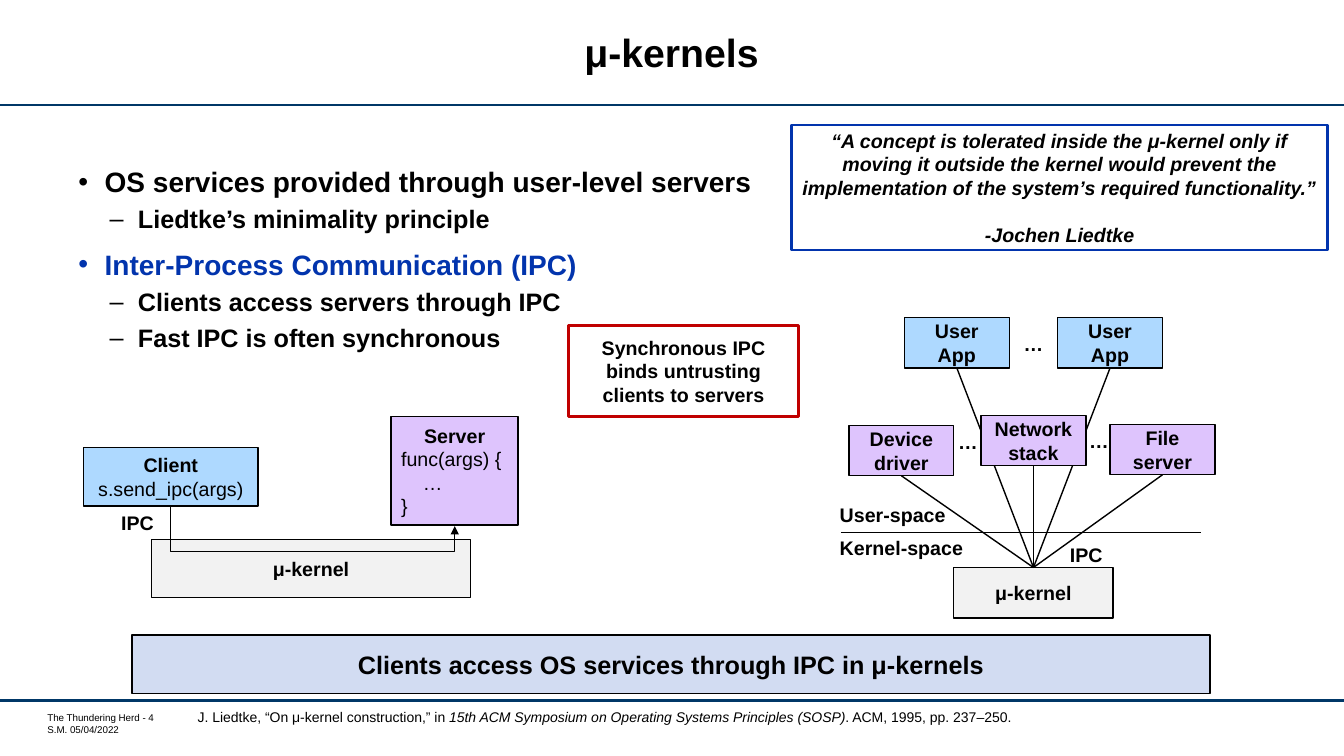
from dataclasses import dataclass

from lxml import etree
from pptx import Presentation
from pptx import util as u
from pptx.dml.color import RGBColor
from pptx.enum import shapes, text
from pptx.oxml import ns

BLACK = RGBColor(0x00, 0x00, 0x00)
WHITE = RGBColor(0xFF, 0xFF, 0xFF)
NAVY = RGBColor(0x00, 0x37, 0x67)
BLUE = RGBColor(0x02, 0x34, 0xAD)
RED = RGBColor(0xC0, 0x00, 0x00)
APP_BLUE = RGBColor(0xAE, 0xD9, 0xFF)
SERVER_PURPLE = RGBColor(0xDE, 0xC4, 0xFD)
KERNEL_GREY = RGBColor(0xF2, 0xF2, 0xF2)
SUMMARY_BLUE = RGBColor(0xD2, 0xDC, 0xF2)

LEFT, CENTER = text.PP_ALIGN.LEFT, text.PP_ALIGN.CENTER
TOP, MIDDLE = text.MSO_ANCHOR.TOP, text.MSO_ANCHOR.MIDDLE


@dataclass(frozen=True)
class Line:
    """One paragraph of text."""
    text: str
    size: float = 14
    bold: bool = True
    italic: bool = False
    align: text.PP_ALIGN = CENTER
    color: RGBColor = BLACK
    space_before: float = 0


@dataclass(frozen=True)
class Box:
    left: float
    top: float
    width: float
    height: float
    lines: tuple[Line, ...]
    fill: RGBColor
    border: RGBColor = BLACK
    border_width: float = 1


@dataclass(frozen=True)
class Label:
    left: float
    top: float
    width: float
    height: float
    lines: tuple[Line, ...]
    wrap: bool = False
    anchor: text.MSO_ANCHOR = TOP
    inset: bool = True


@dataclass(frozen=True)
class Bullet:
    line: Line
    symbol: str
    margin: float
    hanging: float


def style_paragraph(paragraph, line: Line) -> None:
    paragraph.alignment = line.align
    if line.space_before:
        paragraph.space_before = u.Pt(line.space_before)
    font = paragraph.font
    font.name, font.size = "Arial", u.Pt(line.size)
    font.bold, font.italic = line.bold, line.italic
    font.color.rgb = line.color


def write_lines(frame, lines: tuple[Line, ...]) -> None:
    for index, line in enumerate(lines):
        paragraph = frame.add_paragraph() if index else frame.paragraphs[0]
        paragraph.add_run().text = line.text
        style_paragraph(paragraph, line)


def draw_box(slide, box: Box) -> None:
    shape = slide.shapes.add_shape(
        shapes.MSO_SHAPE.RECTANGLE, u.Inches(box.left), u.Inches(box.top),
        u.Inches(box.width), u.Inches(box.height))
    shape.shadow.inherit = False
    shape.fill.solid()
    shape.fill.fore_color.rgb = box.fill
    shape.line.color.rgb = box.border
    shape.line.width = u.Pt(box.border_width)
    shape.text_frame.word_wrap = True
    shape.text_frame.vertical_anchor = MIDDLE
    write_lines(shape.text_frame, box.lines)


def draw_label(slide, label: Label):
    """Draw a text box and return its text frame."""
    frame = slide.shapes.add_textbox(
        u.Inches(label.left), u.Inches(label.top),
        u.Inches(label.width), u.Inches(label.height)).text_frame
    frame.word_wrap = label.wrap
    frame.vertical_anchor = label.anchor
    if not label.inset:
        frame.margin_left = frame.margin_top = frame.margin_right = frame.margin_bottom = 0
    write_lines(frame, label.lines)
    return frame


def draw_connector(slide, start: tuple[float, float], end: tuple[float, float],
                   color: RGBColor = BLACK, width: float = 1,
                   kind: shapes.MSO_CONNECTOR = shapes.MSO_CONNECTOR.STRAIGHT):
    connector = slide.shapes.add_connector(
        kind, *(u.Inches(value) for value in (*start, *end)))
    connector.line.color.rgb = color
    connector.line.width = u.Pt(width)
    etree.SubElement(connector.element.spPr, ns.qn("a:effectLst"))
    return connector


def draw_ipc_arrow(slide) -> None:
    """Draw the arrow from the client down through the kernel and up to the server."""
    arrow = draw_connector(slide, (3.2, 3.71), (3, 6.53), kind=shapes.MSO_CONNECTOR.ELBOW)
    properties = arrow.element.spPr
    properties.find(ns.qn("a:xfrm")).set("rot", "16200000")
    adjustments = properties.find(ns.qn("a:prstGeom")).get_or_add_avLst()
    etree.SubElement(adjustments, ns.qn("a:gd"), name="adj1", fmla="val 226200")
    etree.SubElement(properties.find(ns.qn("a:ln")), ns.qn("a:tailEnd"), type="triangle")


def draw_bullets(slide, bullets: tuple[Bullet, ...]) -> None:
    frame = slide.shapes.add_textbox(
        u.Inches(0.68), u.Inches(1.62), u.Inches(11.9), u.Inches(4.51)).text_frame
    frame.word_wrap = True
    for index, bullet in enumerate(bullets):
        paragraph = frame.add_paragraph() if index else frame.paragraphs[0]
        paragraph.add_run().text = bullet.line.text
        paragraph.line_spacing = 0.9
        properties = paragraph._p.get_or_add_pPr()
        properties.set("marL", str(u.Inches(bullet.margin)))
        properties.set("indent", str(-u.Inches(bullet.hanging)))
        etree.SubElement(properties, ns.qn("a:buFont"), typeface="Arial")
        etree.SubElement(properties, ns.qn("a:buChar"), char=bullet.symbol)
        style_paragraph(paragraph, bullet.line)


def topic(words: str, color: RGBColor = BLACK, space_before: float = 12) -> Bullet:
    line = Line(words, 20, align=LEFT, color=color, space_before=space_before)
    return Bullet(line, "•", 0.26, 0.26)


def detail(words: str) -> Bullet:
    return Bullet(Line(words, 18, align=LEFT, space_before=6), "–", 0.59, 0.28)


def component(left: float, top: float, name: str, fill: RGBColor) -> Box:
    return Box(left, top, 1.04, 0.5, (Line(name),), fill)


def code(words: str) -> Line:
    return Line(words, bold=False, align=LEFT)


KERNEL_TOP = (10.25, 5.63)
BULLETS = (
    topic("OS services provided through user-level servers", space_before=0),
    detail("Liedtke’s minimality principle"),
    topic("Inter-Process Communication (IPC)", BLUE),
    detail("Clients access servers through IPC"),
    detail("Fast IPC is often synchronous"),
)
SYSTEM_BOXES = (
    Box(1.31, 6.3, 10.69, 0.58,
        (Line("Clients access OS services through IPC in μ-kernels", 18),), SUMMARY_BLUE),
    Box(9.46, 5.63, 1.58, 0.5, (Line("μ-kernel"),), KERNEL_GREY),
    component(8.42, 4.22, "Device driver", SERVER_PURPLE),
    component(11.01, 4.21, "File server", SERVER_PURPLE),
    component(8.97, 3.15, "User App", APP_BLUE),
    component(10.49, 3.15, "User App", APP_BLUE),
)
IPC_SOURCES = ((8.94, 4.72), (10.25, 4.62), (11.53, 4.71), (9.49, 3.65), (11.01, 3.65))
QUOTE = ("“A concept is tolerated inside the μ-kernel only if moving it outside the kernel "
         "would prevent the implementation of the system’s required functionality.”")
FRONT_BOXES = (
    component(9.73, 4.12, "Network stack", SERVER_PURPLE),
    Box(7.85, 1.24, 5.32, 1.24,
        (Line(QUOTE, italic=True), Line("-Jochen Liedtke", italic=True, space_before=16.5)),
        WHITE, BLUE, 2),
    Box(0.83, 4.44, 1.73, 0.58,
        (Line("Client"), Line("s.send_ipc(args)", bold=False)), APP_BLUE),
    Box(1.5, 5.35, 3.17, 0.58, (Line("μ-kernel"),), KERNEL_GREY),
    Box(3.88, 4.13, 1.26, 1.08,
        (Line("Server"), code("func(args) {"), code("    …"), code("}")), SERVER_PURPLE),
    Box(5.64, 3.23, 2.28, 0.9,
        (Line("Synchronous IPC binds untrusting clients to servers"),), WHITE, RED, 2),
)
LABELS = (
    Label(0.47, 7.06, 2.03, 0.24,
          tuple(Line(words, 7, bold=False, align=LEFT)
                for words in ("The Thundering Herd - 4", "S.M. 05/04/2022")),
          wrap=True, inset=False),
    *(Label(left, top, 0.4, 0.34, (Line("…"),))
      for left, top in ((9.4, 4.22), (10.7, 4.21), (10.05, 3.24))),
    Label(8.23, 4.94, 1.26, 0.34, (Line("User-space", align=LEFT),)),
    Label(8.23, 5.27, 1.43, 0.34, (Line("Kernel-space", align=LEFT),)),
    *(Label(left, top, 0.53, 0.34, (Line("IPC"),))
      for left, top in ((10.51, 5.34), (1.1, 5.02))),
)


def main() -> None:
    presentation = Presentation()
    presentation.slide_width, presentation.slide_height = u.Inches(13.33), u.Inches(7.5)
    slide = presentation.slides.add_slide(presentation.slide_layouts[6])
    for rule_y in (1.04, 6.95):
        draw_connector(slide, (0, rule_y), (13.33, rule_y), NAVY, 1.75)
    title = draw_label(slide, Label(1.37, 0.11, 10.58, 0.89, (Line("μ-kernels", 28),),
                                    wrap=True, anchor=MIDDLE))
    title.paragraphs[0].line_spacing = u.Pt(28)
    draw_bullets(slide, BULLETS)
    for box in SYSTEM_BOXES:
        draw_box(slide, box)
    draw_connector(slide, (8.34, 5.28), (11.91, 5.28))
    for source in IPC_SOURCES:
        draw_connector(slide, source, KERNEL_TOP)
    for box in FRONT_BOXES:
        draw_box(slide, box)
    draw_ipc_arrow(slide)
    for label in LABELS:
        draw_label(slide, label)
    citation = draw_label(slide, Label(1.8, 6.98, 8.39, 0.27, (
        Line("J. Liedtke, “On μ-kernel construction,” in ", 10, bold=False),))).paragraphs[0]
    venue = citation.add_run()
    venue.text = "15th ACM Symposium on Operating Systems Principles (SOSP)"
    venue.font.italic = True
    citation.add_run().text = ". ACM, 1995, pp. 237–250."
    presentation.save("out.pptx")


if __name__ == "__main__":
    main()
